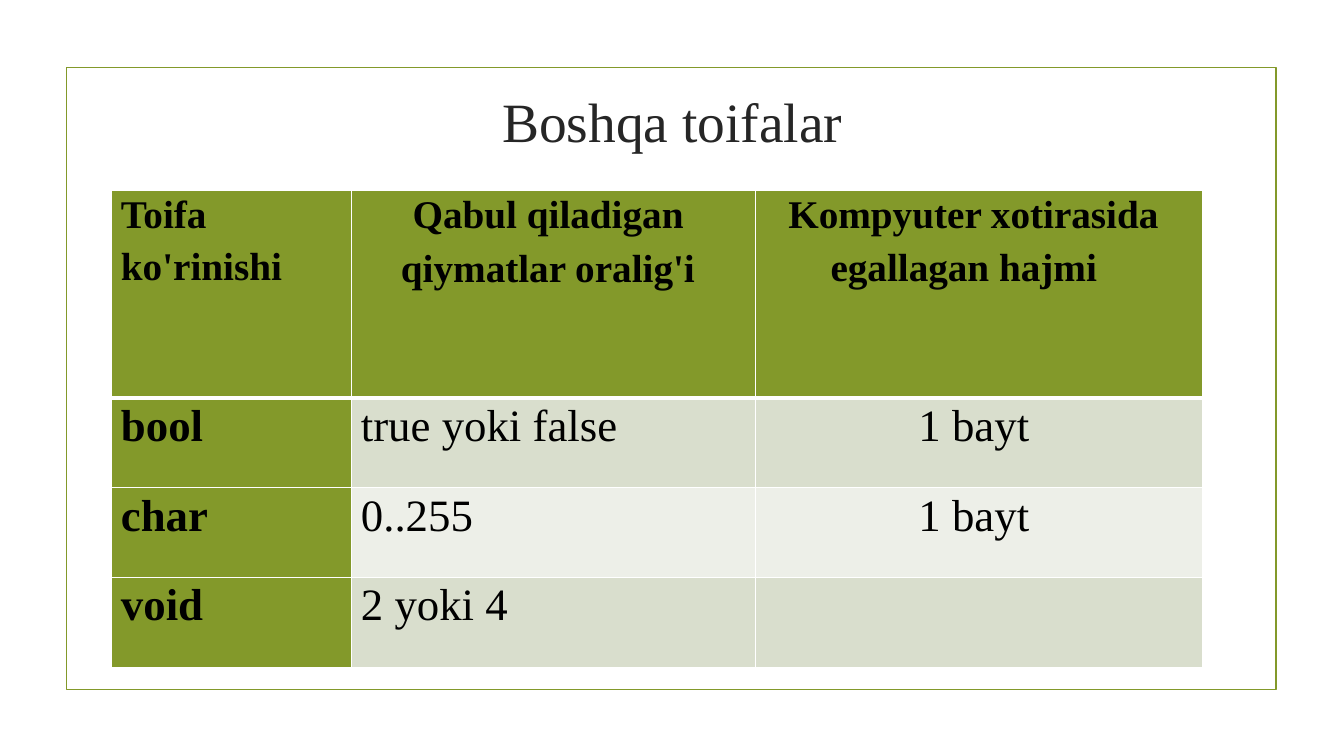
import pptx
import pptx.util
import pptx.dml.color
import pptx.enum.shapes
import pptx.enum.text
import pptx.oxml
import pptx.oxml.ns

Inches = pptx.util.Inches
Pt = pptx.util.Pt
RGBColor = pptx.dml.color.RGBColor
ALIGN = pptx.enum.text.PP_ALIGN
ANCHOR = pptx.enum.text.MSO_ANCHOR

OLIVE = RGBColor(0x83, 0x99, 0x2A)
BAND_DARK = RGBColor(0xD9, 0xDE, 0xCD)
BAND_LIGHT = RGBColor(0xED, 0xEF, 0xE8)
WHITE = RGBColor(0xFF, 0xFF, 0xFF)
BLACK = RGBColor(0x00, 0x00, 0x00)
TITLE_GREY = RGBColor(0x26, 0x26, 0x26)
FONT = "Times New Roman"

COLUMN_WIDTHS = [2.38, 4, 4.44]
ROW_HEIGHTS = [2.06, 0.89, 0.89, 0.89]

# Header paragraphs: spans of (text, size), alignment, left and right indent, space after
HEADER = [
    [([("Toifa ko'rinishi", 28), (" ", 32)], ALIGN.LEFT, 0.05, 0, 0)],
    [([("Qabul qiladigan ", 28)], ALIGN.CENTER, 0.01, 0, 1.4),
     ([("qiymatlar oralig'i", 28), (" ", 32)], ALIGN.CENTER, 0.02, 0, 0)],
    [([("Kompyuter xotirasida", 28)], ALIGN.RIGHT, 0.05, 0.38, 0.6),
     ([("egallagan hajmi", 28), (" ", 32)], ALIGN.CENTER, 0.03, 0.2, 0)],
]
TYPES = [
    ["bool", "true yoki false", "1 bayt "],
    ["char", "0..255", "1 bayt "],
    ["void", "2 yoki 4", ""],
]


def add_span(para, text, size, color, bold=False):
    span = para.add_run()
    span.text = text
    span.font.name = FONT
    span.font.size = Pt(size)
    span.font.bold = bold
    span.font.color.rgb = color


def add_frame(page):
    frame = page.shapes.add_shape(pptx.enum.shapes.MSO_SHAPE.RECTANGLE,
                                  Inches(0.66), Inches(0.67), Inches(12), Inches(6.17))
    frame.shadow.inherit = False
    frame.fill.background()
    frame.line.color.rgb = OLIVE
    frame.line.width = Pt(1.25)


def add_title(page, text):
    box = page.shapes.add_textbox(Inches(1.42), Inches(0.79), Inches(10.5), Inches(0.8))
    box.text_frame.word_wrap = True
    box.text_frame.vertical_anchor = ANCHOR.MIDDLE
    para = box.text_frame.paragraphs[0]
    para.alignment = ALIGN.CENTER
    add_span(para, text, 39.6, TITLE_GREY)


def set_borders(cell, top, bottom):
    properties = cell._tc.get_or_add_tcPr()
    widths = [("L", 1), ("R", 1), ("T", top), ("B", bottom)]
    for place, (side, width) in enumerate(widths):
        border = pptx.oxml.parse_xml(
            f'<a:ln{side} {pptx.oxml.ns.nsdecls("a")} w="{Pt(width)}">'
            f'<a:solidFill><a:srgbClr val="{WHITE}"/></a:solidFill></a:ln{side}>')
        properties.insert(place, border)


def fill_cell(cell, color, paragraphs, bold):
    cell.margin_left, cell.margin_right = Inches(0.04), Inches(0.06)
    cell.margin_top = cell.margin_bottom = 0
    cell.fill.solid()
    cell.fill.fore_color.rgb = color
    for number, (spans, alignment, left, right, after) in enumerate(paragraphs):
        frame = cell.text_frame
        para = frame.add_paragraph() if number else frame.paragraphs[0]
        para.alignment = alignment
        para.line_spacing = 1.07
        para.space_after = Pt(after)
        indents = para._p.get_or_add_pPr()
        indents.set("marL", str(Inches(left)))
        indents.set("marR", str(Inches(right)))
        for text, size in spans:
            add_span(para, text, size, BLACK, bold)


def body_paragraphs(text, column):
    if not text:
        return []
    alignment, left = (ALIGN.CENTER, 0.03) if column == 2 else (ALIGN.LEFT, 0.05)
    return [([(text, 32)], alignment, left, 0, 0)]


def add_type_table(page):
    table = page.shapes.add_table(len(ROW_HEIGHTS), len(COLUMN_WIDTHS), Inches(1.11), Inches(1.89),
                                  Inches(sum(COLUMN_WIDTHS)), Inches(sum(ROW_HEIGHTS))).table
    table.first_col = True
    for column, width in zip(table.columns, COLUMN_WIDTHS):
        column.width = Inches(width)
    for row, height in zip(table.rows, ROW_HEIGHTS):
        row.height = Inches(height)

    # Header row, then banded rows with a bold first column
    for column, paragraphs in enumerate(HEADER):
        cell = table.cell(0, column)
        fill_cell(cell, OLIVE, paragraphs, True)
        set_borders(cell, 1, 3)
    for row, texts in enumerate(TYPES, start=1):
        band = BAND_DARK if row % 2 else BAND_LIGHT
        for column, text in enumerate(texts):
            cell = table.cell(row, column)
            fill_cell(cell, band if column else OLIVE, body_paragraphs(text, column), column == 0)
            set_borders(cell, 3 if row == 1 else 1, 1)


def main():
    deck = pptx.Presentation()
    deck.slide_width, deck.slide_height = Inches(13.33), Inches(7.5)
    page = deck.slides.add_slide(deck.slide_layouts[6])
    add_frame(page)
    add_title(page, "Boshqa toifalar")
    add_type_table(page)
    deck.save("out.pptx")


if __name__ == "__main__":
    main()
